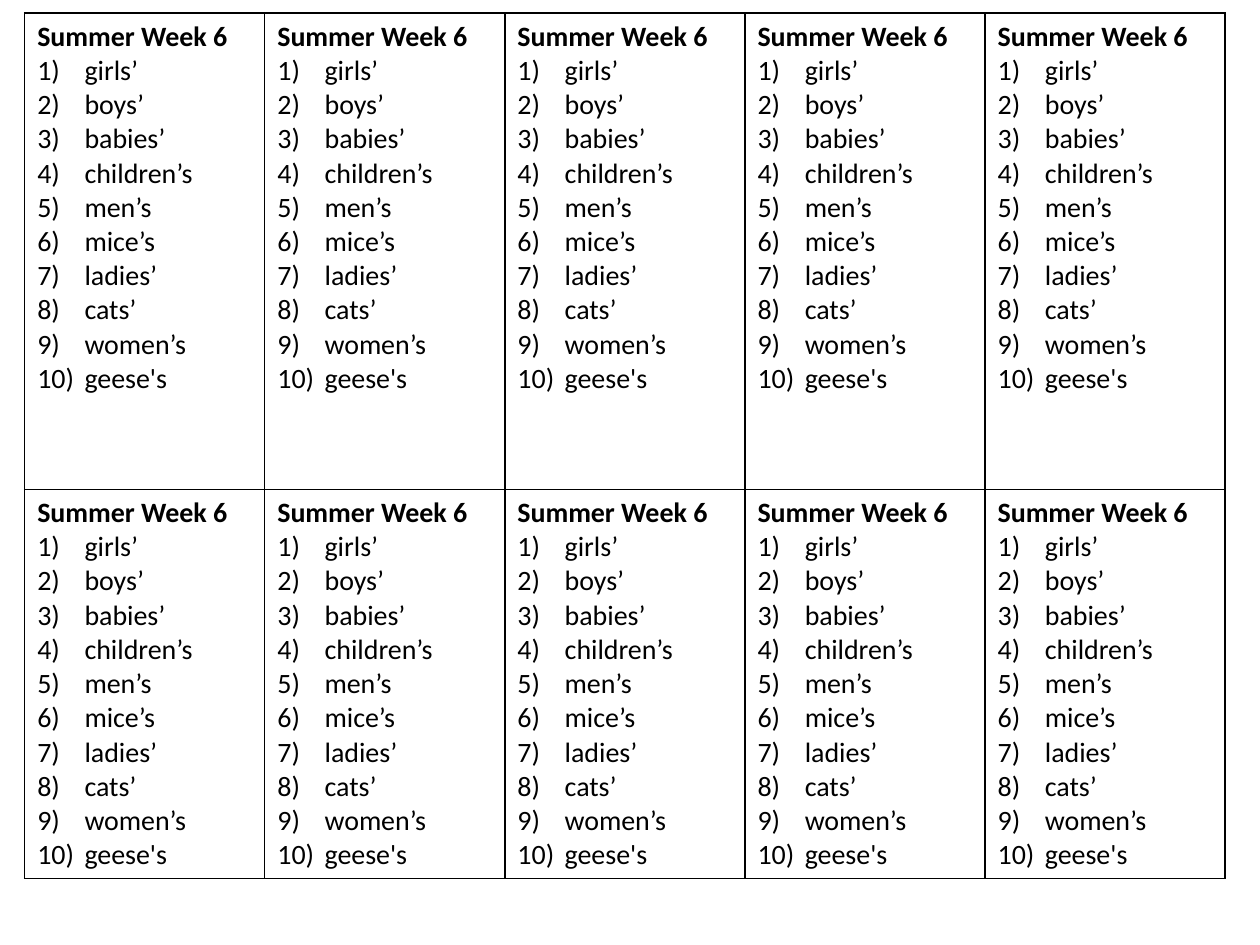
from lxml.etree import SubElement
from pptx import Presentation
from pptx.dml.color import RGBColor
from pptx.oxml.ns import qn
from pptx.util import Pt

TITLE = "Summer Week 6"
WORDS = ["girls’", "boys’", "babies’", "children’s", "men’s",
         "mice’s", "ladies’", "cats’", "women’s", "geese's"]
COLUMNS = 5
COLUMN_WIDTH = 137.2
ROW_HEIGHTS = [272.16, 218.16]


def rgb(value):
    return RGBColor.from_string(value)


class SpellingSheet:
    font = "Calibri"
    size = 16
    ink = "000000"
    border = 1
    indent = 27

    def __init__(self, slide):
        self.s = slide

    def table(self, left, top, column_widths, row_heights):
        frame = self.s.shapes.add_table(
            len(row_heights), len(column_widths), Pt(left), Pt(top),
            Pt(sum(column_widths)), Pt(sum(row_heights)))
        table = frame.table
        table.first_row = table.horz_banding = False
        for column, width in zip(table.columns, column_widths):
            column.width = Pt(width)
        for row, height in zip(table.rows, row_heights):
            row.height = Pt(height)
        return table

    def borders(self, cell):
        tc_pr = cell._tc.get_or_add_tcPr()
        for side in ("a:lnL", "a:lnR", "a:lnT", "a:lnB"):
            ln = SubElement(tc_pr, qn(side), w=str(Pt(self.border)))
            fill = SubElement(ln, qn("a:solidFill"))
            SubElement(fill, qn("a:srgbClr"), val=self.ink)

    def run(self, p, text, bold=False):
        r = p.add_run()
        r.text = text
        r.font.name = self.font
        r.font.size = Pt(self.size)
        r.font.bold = bold
        r.font.color.rgb = rgb(self.ink)

    def number(self, p):
        p_pr = p._p.get_or_add_pPr()
        p_pr.set("marL", str(Pt(self.indent)))
        p_pr.set("indent", str(-Pt(self.indent)))
        SubElement(p_pr, qn("a:buFont"), typeface="+mj-lt")
        SubElement(p_pr, qn("a:buAutoNum"), type="arabicParenR")

    def word_list(self, cell, title, words):
        self.borders(cell)
        cell.fill.background()
        tf = cell.text_frame
        self.run(tf.paragraphs[0], title, bold=True)
        for word in words:
            p = tf.add_paragraph()
            self.number(p)
            self.run(p, word)


def main():
    prs = Presentation()
    prs.slide_width, prs.slide_height = Pt(720), Pt(540)
    sheet = SpellingSheet(prs.slides.add_slide(prs.slide_layouts[6]))

    # The same spelling list in every cell, ready to cut out
    table = sheet.table(14.1, 7.5, [COLUMN_WIDTH] * COLUMNS, ROW_HEIGHTS)
    for cell in table.iter_cells():
        sheet.word_list(cell, TITLE, WORDS)

    prs.save("out.pptx")


if __name__ == "__main__":
    main()
